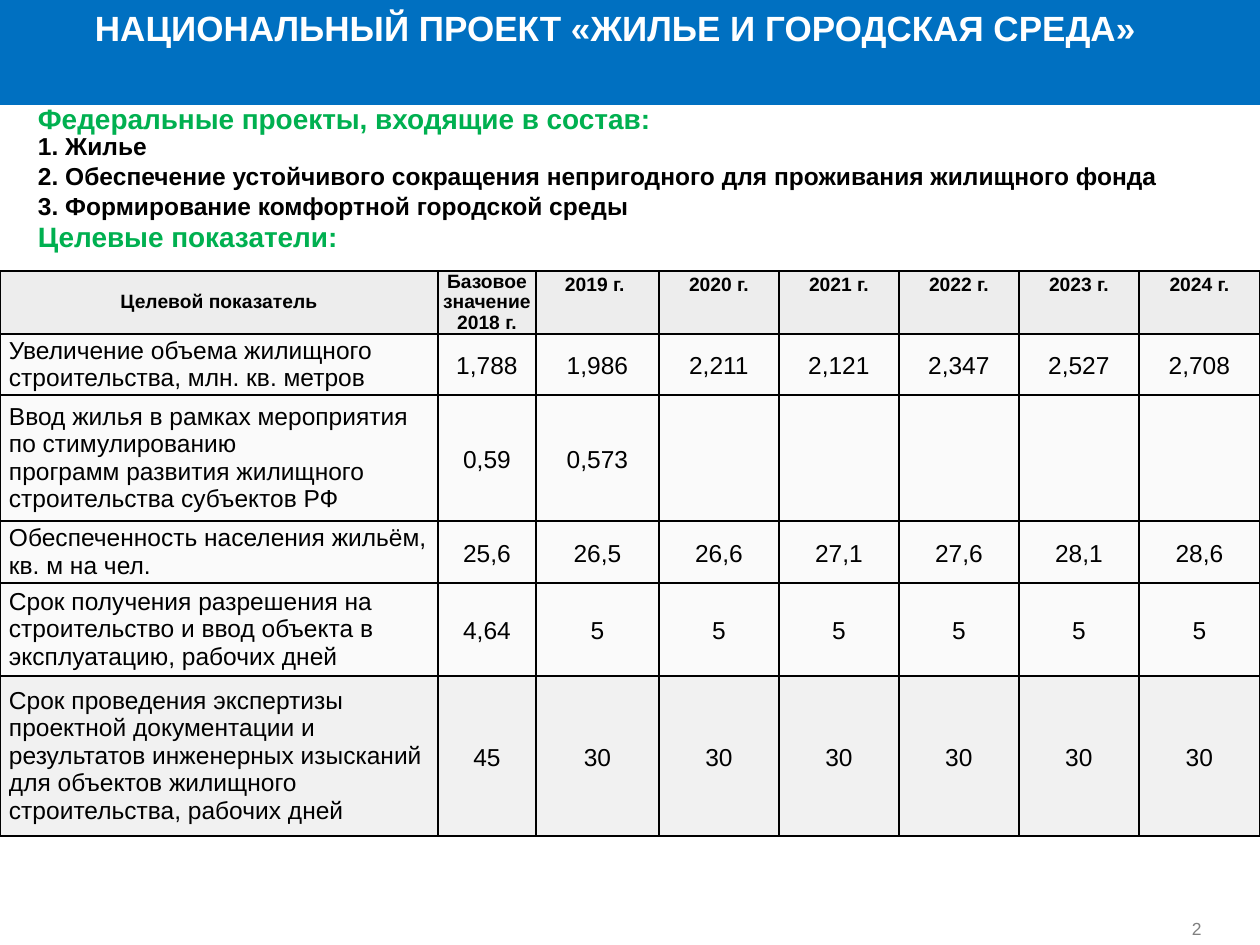
"""Builds the slide on the national project for housing and the urban environment."""
from typing import NamedTuple

from lxml.etree import SubElement
from pptx import Presentation
from pptx.dml.color import RGBColor
from pptx.enum.shapes import MSO_SHAPE
from pptx.enum.text import MSO_ANCHOR as Anchor, MSO_AUTO_SIZE as AutoSize, PP_ALIGN as Align
from pptx.oxml.ns import qn
from pptx.util import Emu, Pt

EMU_PER_INCH, PX_PER_INCH = 914400, 126
BLACK, WHITE, GREEN, BLUE, GREY = "000000", "FFFFFF", "00B050", "0070C1", "808080"


class Label(NamedTuple):
    text: str
    box: tuple[int, int, int, int]
    size: int = 14
    color: str = BLACK
    bold: bool = True
    wrap: bool = True
    align: Align = Align.LEFT
    anchor: Anchor = Anchor.TOP
    inset: int = 13


class Indicator(NamedTuple):
    name: str
    values: list[str]
    height: int
    fill: str = "F2F2F2"
    opacity: int = 36
    name_after: int = 0
    value_after: int = 0


LABELS = [
    Label("2", (1186, 895, 70, 50), 10, GREY, bold=False, wrap=False, anchor=Anchor.BOTTOM, inset=6),
    Label("1. Жилье", (25, 125, 707, 43)),
    Label("2. Обеспечение устойчивого сокращения непригодного для проживания жилищного фонда",
          (25, 155, 1216, 43)),
    Label("3. Формирование комфортной городской среды", (25, 185, 1216, 43)),
    Label("Федеральные проекты, входящие в состав:", (25, 96, 707, 47), 16, GREEN),
    Label("Целевые показатели:", (25, 214, 456, 47), 16, GREEN),
    Label("НАЦИОНАЛЬНЫЙ ПРОЕКТ «ЖИЛЬЕ И ГОРОДСКАЯ СРЕДА»", (84, 0, 1063, 55), 20, WHITE,
          wrap=False, align=Align.CENTER, inset=6),
]
HEADINGS = ["Целевой показатель", "Базовое значение 2018 г.", "2019 г. ",
            *[f"{year} г." for year in range(2020, 2025)]]
HEADING_HEIGHT = 63
COLUMN_WIDTHS = [438, 98, 123, 120, 120, 120, 120, 121]
INDICATORS = [
    Indicator("Увеличение объема жилищного строительства, млн.\u00a0кв.\u00a0метров",
              ["1,788", "1,986", "2,211", "2,121", "2,347", "2,527", "2,708"], 61),
    Indicator("Ввод жилья в рамках мероприятия по стимулированию\n"
              "программ развития жилищного строительства субъектов РФ",
              ["0,59", "0,573", *[""] * 5], 126),
    Indicator("Обеспеченность населения жильём, кв. м на чел.",
              ["25,6", "26,5", "26,6", "27,1", "27,6", "28,1", "28,6"], 62, name_after=6),
    Indicator("Срок получения разрешения на строительство и ввод объекта в эксплуатацию, рабочих дней",
              ["4,64", *["5"] * 6], 93, name_after=6, value_after=6),
    Indicator("Срок проведения экспертизы проектной документации и результатов инженерных изысканий "
              "для объектов жилищного строительства, рабочих дней",
              ["45", *["30"] * 6], 160, fill="D9D9D9", opacity=35),
]


def px(length: int) -> Emu:
    """Turn pixels into EMU."""
    return Emu(round(length * EMU_PER_INCH / PX_PER_INCH))


def rgb(value: str) -> RGBColor:
    """Turn a hex string into a colour."""
    return RGBColor.from_string(value)


def write(frame, text: str, *, size: int = 14, color: str = BLACK, bold: bool = False,
          align: Align = Align.LEFT, spacing=None, after: int = 0) -> None:
    """Fill a text frame with one paragraph per line of text."""
    for index, line in enumerate(text.split("\n")):
        paragraph = frame.add_paragraph() if index else frame.paragraphs[0]
        paragraph.alignment = align
        paragraph.line_spacing = spacing
        paragraph.space_after = Pt(after)
        font = paragraph.font
        if line:
            run = paragraph.add_run()
            run.text = line
            font = run.font
        font.name, font.size, font.bold = "Arial", Pt(size), bold
        font.color.rgb = rgb(color)


def add_label(slide, label: Label) -> None:
    """Place a text box on the slide."""
    frame = slide.shapes.add_textbox(*map(px, label.box)).text_frame
    frame.word_wrap, frame.auto_size = label.wrap, AutoSize.SHAPE_TO_FIT_TEXT
    frame.vertical_anchor = label.anchor
    frame.margin_left = frame.margin_right = px(label.inset)
    frame.margin_top = frame.margin_bottom = px(6)
    write(frame, label.text, size=label.size, color=label.color, bold=label.bold, align=label.align)


def add_band(slide) -> None:
    """Draw the coloured band behind the title."""
    band = slide.shapes.add_shape(MSO_SHAPE.RECTANGLE, 0, 0, px(1260), px(105))
    band.shadow.inherit = False
    band.fill.solid()
    band.fill.fore_color.rgb = rgb(BLUE)
    band.line.fill.background()


def style_cell(cell, fill: str, inset: int, anchor: Anchor, opacity: int = 100) -> None:
    """Set the borders, fill, margins and anchor of a cell."""
    properties = cell._tc.get_or_add_tcPr()
    for side in ("a:lnL", "a:lnR", "a:lnT", "a:lnB"):
        border = SubElement(properties, qn(side), w=str(Pt(1)))
        SubElement(SubElement(border, qn("a:solidFill")), qn("a:srgbClr"), val=BLACK)
    cell.fill.solid()
    cell.fill.fore_color.rgb = rgb(fill)
    if opacity < 100:
        shade = properties.find(qn("a:solidFill")).find(qn("a:srgbClr"))
        SubElement(shade, qn("a:alpha"), val=str(opacity * 1000))
    cell.margin_left = cell.margin_right = px(inset)
    cell.margin_top = cell.margin_bottom = 0
    cell.vertical_anchor = anchor


def add_indicator_table(slide) -> None:
    """Build the table of target indicators."""
    heights = [HEADING_HEIGHT, *[indicator.height for indicator in INDICATORS]]
    table = slide.shapes.add_table(len(heights), len(COLUMN_WIDTHS), 0, px(271),
                                   px(sum(COLUMN_WIDTHS)), px(sum(heights))).table
    table.first_row = table.horz_banding = False
    for column, width in zip(table.columns, COLUMN_WIDTHS):
        column.width = px(width)
    for row, height in zip(table.rows, heights):
        row.height = px(height)
    heading_anchors = [Anchor.MIDDLE, Anchor.BOTTOM, *[Anchor.TOP] * 6]
    for index, (heading, anchor) in enumerate(zip(HEADINGS, heading_anchors)):
        cell = table.cell(0, index)
        style_cell(cell, "EDEDED", 1, anchor)
        write(cell.text_frame, heading, size=11, bold=True, align=Align.CENTER,
              spacing=1.15 if anchor == Anchor.TOP else Pt(12))
    for row, indicator in enumerate(INDICATORS, 1):
        for index, text in enumerate([indicator.name, *indicator.values]):
            cell = table.cell(row, index)
            style_cell(cell, indicator.fill, 9, Anchor.MIDDLE, indicator.opacity)
            if index:
                write(cell.text_frame, text, align=Align.CENTER, spacing=Pt(18),
                      after=indicator.value_after)
            else:
                write(cell.text_frame, text, after=indicator.name_after)


def main() -> None:
    """Build and save the slide."""
    deck = Presentation()
    deck.slide_width, deck.slide_height = px(1260), px(945)
    slide = deck.slides.add_slide(deck.slide_layouts[6])
    add_band(slide)
    add_indicator_table(slide)
    for label in LABELS:
        add_label(slide, label)
    deck.save("out.pptx")


if __name__ == "__main__":
    main()
